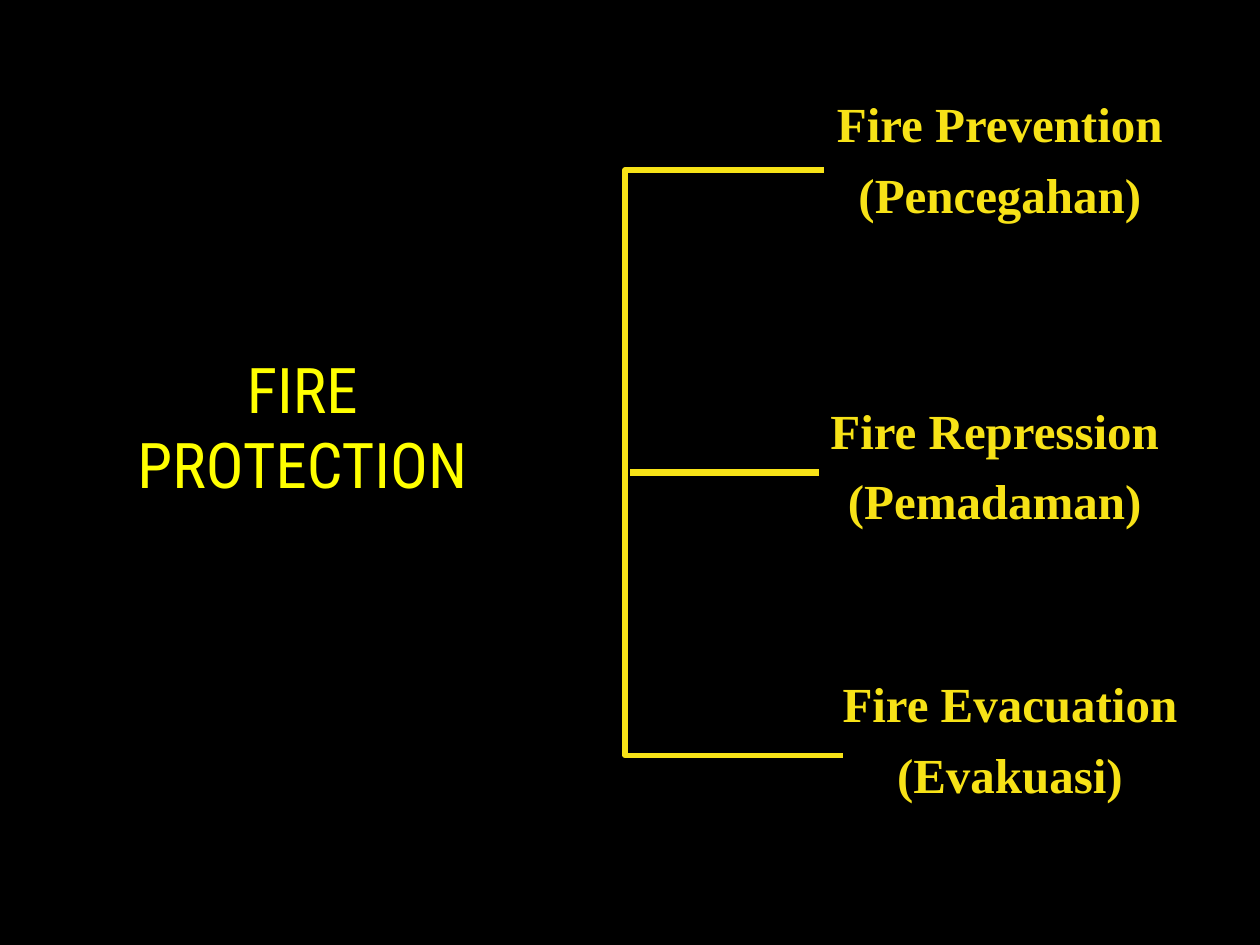
from pptx import Presentation
from pptx.dml.color import RGBColor
from pptx.enum.shapes import MSO_CONNECTOR
from pptx.enum.text import MSO_ANCHOR, MSO_AUTO_SIZE, PP_ALIGN
from pptx.util import Pt
from lxml import etree

BLACK = RGBColor(0x00, 0x00, 0x00)
YELLOW = RGBColor(0xFF, 0xFF, 0x00)
GOLD = RGBColor(0xF7, 0xE2, 0x17)
CENTER = PP_ALIGN.CENTER
TOP = MSO_ANCHOR.TOP
NONE = MSO_AUTO_SIZE.NONE
GROW = MSO_AUTO_SIZE.SHAPE_TO_FIT_TEXT
STRAIGHT = MSO_CONNECTOR.STRAIGHT
EFFECTS = "{http://schemas.openxmlformats.org/drawingml/2006/main}effectLst"


def place(shape, left, top, width, height):
    shape.left, shape.top = Pt(left), Pt(top)
    shape.width, shape.height = Pt(width), Pt(height)


def write(frame, lines, face, size, color, bold):
    for i, line in enumerate(lines):
        para = frame.paragraphs[0] if i == 0 else frame.add_paragraph()
        para.alignment = CENTER
        run = para.add_run()
        run.text = line
        run.font.name = face
        run.font.size = Pt(size)
        run.font.bold = bold
        run.font.color.rgb = color


prs = Presentation()
prs.slide_width, prs.slide_height = Pt(720), Pt(540)
slide = prs.slides.add_slide(prs.slide_layouts[5])
slide.background.fill.solid()
slide.background.fill.fore_color.rgb = BLACK

title = slide.shapes.title
place(title, 28.1, 196.6, 289.4, 139)
frame = title.text_frame
frame.word_wrap = False
frame.auto_size = NONE
frame.vertical_anchor = TOP
write(frame, ["FIRE", "PROTECTION"], "Roboto Condensed", 36, YELLOW, False)

group = slide.shapes.add_group_shape()
pen = group.shapes.build_freeform(Pt(470.9), Pt(97.2))
pen.add_line_segments(
    [(Pt(357.1), Pt(97.2)), (Pt(357.1), Pt(431.6)), (Pt(481.7), Pt(431.6))],
    close=False,
)
bracket = pen.convert_to_shape()
bracket.shadow.inherit = False
bracket.fill.background()
bracket.line.color.rgb = GOLD
bracket.line.width = Pt(3)

branch = group.shapes.add_connector(STRAIGHT, Pt(360), Pt(270), Pt(468), Pt(270))
branch.line.color.rgb = GOLD
branch.line.width = Pt(4.5)
etree.SubElement(branch.line._get_or_add_ln().getparent(), EFFECTS)

topics = [
    (450.7, 57.6, ["Fire Prevention", "(Pencegahan)"]),
    (447.8, 232.9, ["Fire Repression", "(Pemadaman)"]),
    (456.5, 389, ["Fire Evacuation", "(Evakuasi)"]),
]
for left, top, lines in topics:
    box = slide.shapes.add_textbox(Pt(left), Pt(top), Pt(241.2), Pt(74.9))
    frame = box.text_frame
    frame.word_wrap = True
    frame.auto_size = GROW
    write(frame, lines, "Times New Roman", 28, GOLD, True)
    for para in frame.paragraphs:
        para.line_spacing = 0.75
    frame.paragraphs[1].space_before = Pt(15.3)

prs.save("out.pptx")
